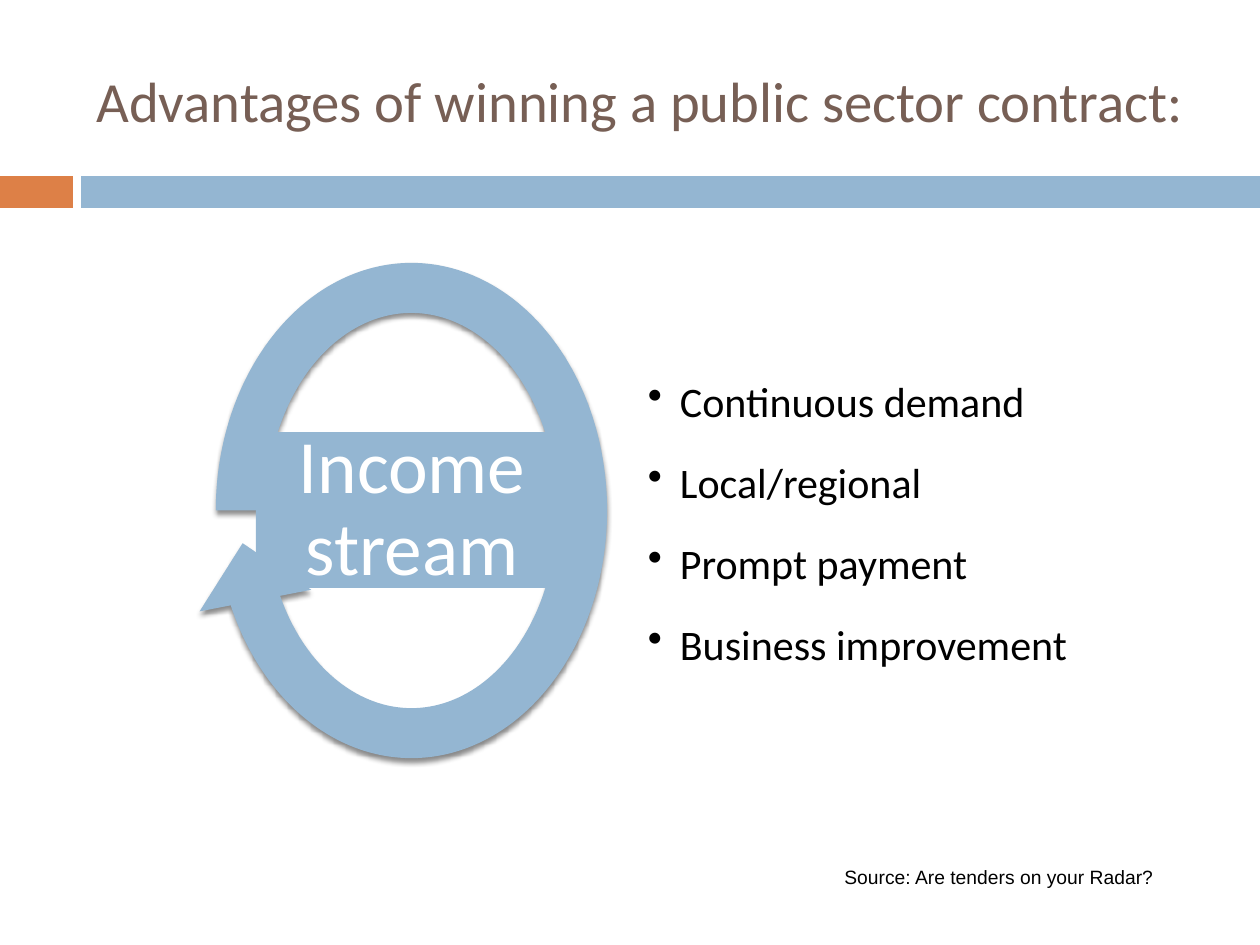
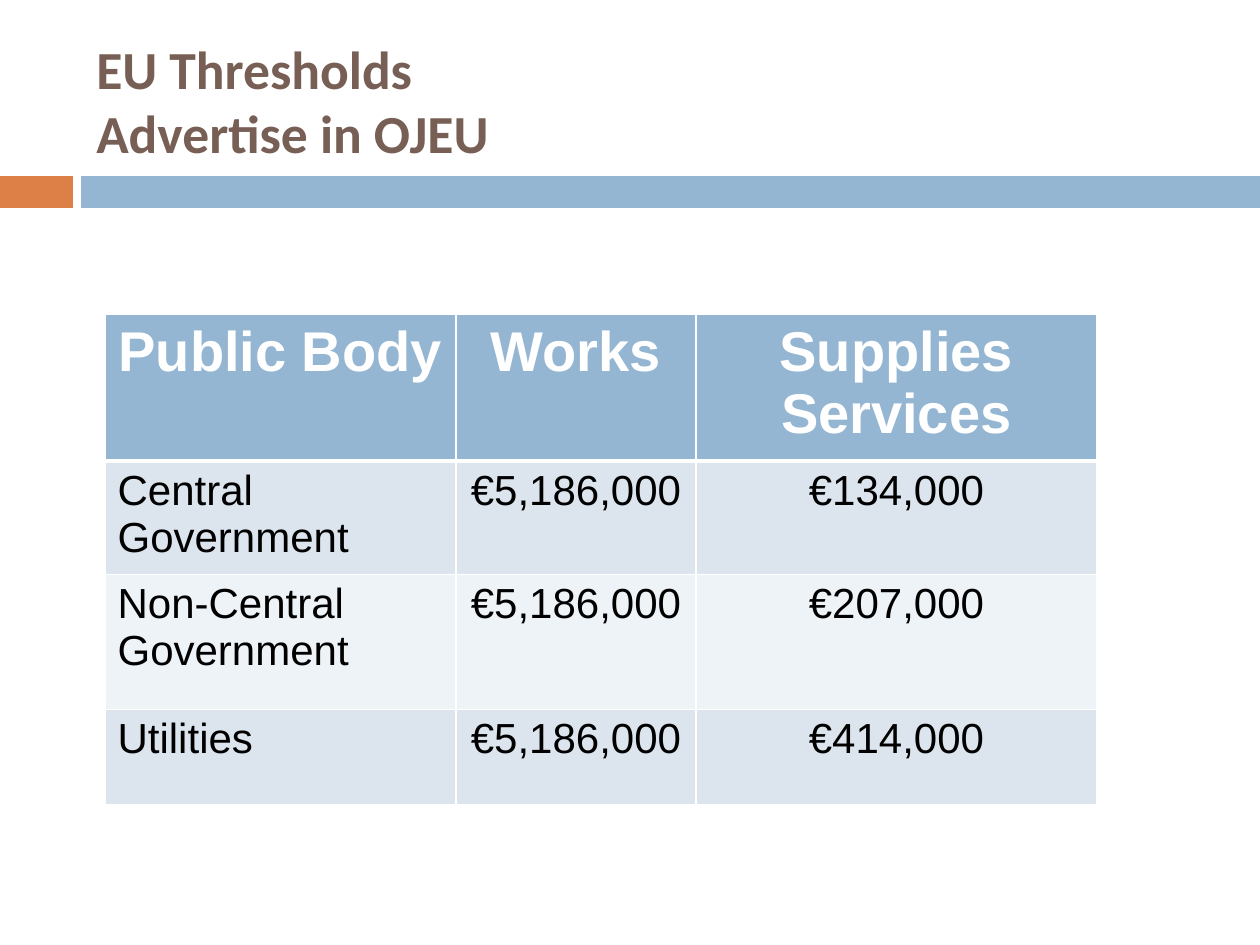
from pptx import Presentation
from pptx.dml.color import RGBColor
from pptx.enum.shapes import MSO_SHAPE
from pptx.enum.text import MSO_ANCHOR, PP_ALIGN
from pptx.oxml import parse_xml
from pptx.oxml.ns import nsdecls, qn
from pptx.util import Pt

RECT, LOOP = MSO_SHAPE.RECTANGLE, MSO_SHAPE.CIRCULAR_ARROW
LEFT, MID, RIGHT = PP_ALIGN.LEFT, PP_ALIGN.CENTER, PP_ALIGN.RIGHT
TOP, CENTRE = MSO_ANCHOR.TOP, MSO_ANCHOR.MIDDLE

SCALE = 914400 / 126
HEX = {"blue": "94B6D2", "orange": "DD8047", "brown": "775F55",
       "black": "000000", "white": "FFFFFF", "odd": "DCE5EE", "even": "EEF3F7"}
BODY, PLAIN = "Calibri", "Arial"


def emu(px):
    return round(px * SCALE)


def rgb(name):
    return RGBColor.from_string(HEX[name])


class Deck:
    def __init__(self):
        self.prs = Presentation()
        self.prs.slide_width, self.prs.slide_height = emu(1260), emu(945)
        self.slide = None

    def page(self, title, size, bold=False):
        """Start a slide with the shared band and title."""
        self.slide = self.prs.slides.add_slide(self.prs.slide_layouts[6])
        self.shape(RECT, (0, 176, 73, 32), "orange")
        self.shape(RECT, (81, 176, 1179, 32), "blue")
        self.text(title, (84, 32, 1124, 136), size, "brown", bold=bold,
                  anchor=CENTRE)

    def shape(self, kind, box, fill):
        item = self.slide.shapes.add_shape(kind, *map(emu, box))
        item.shadow.inherit = False
        item.fill.solid()
        item.fill.fore_color.rgb = rgb(fill)
        item.line.fill.background()
        return item

    def loop(self, box, fill):
        """Circular arrow with a soft shadow below."""
        item = self.shape(LOOP, box, fill)
        for i, value in enumerate((0.11, 11.42, 90, 108, 0.125)):
            item.adjustments[i] = value
        item._element.spPr.find(qn("a:effectLst")).append(parse_xml(
            f'<a:outerShdw {nsdecls("a")} blurRad="{Pt(3)}" dist="{Pt(2.4)}" '
            f'dir="5400000" rotWithShape="0"><a:srgbClr val="{HEX["black"]}">'
            '<a:alpha val="45000"/></a:srgbClr></a:outerShdw>'))

    def style(self, para, size, color, font=BODY, bold=False, align=LEFT):
        para.alignment = align
        for run in para.runs:
            run.font.size, run.font.name, run.font.bold = Pt(size), font, bold
            run.font.color.rgb = rgb(color)

    def text(self, text, box, size, color, font=BODY, bold=False, align=LEFT,
             anchor=TOP, inset=None, spacing=None, after=None, bullet=False):
        frame = self.slide.shapes.add_textbox(*map(emu, box)).text_frame
        frame.word_wrap, frame.vertical_anchor = True, anchor
        if inset is not None:
            frame.margin_left = frame.margin_right = emu(inset)
            frame.margin_top = frame.margin_bottom = emu(inset)
        frame.text = text
        for para in frame.paragraphs:
            if bullet:
                self.bullet(para)
            para.line_spacing = spacing
            para.space_after = after
            self.style(para, size, color, font, bold, align)

    def bullet(self, para):
        props = para._p.get_or_add_pPr()
        props.set("marL", str(emu(32)))
        props.set("indent", str(-emu(32)))
        props.append(parse_xml(f'<a:buChar {nsdecls("a")} char="•"/>'))

    def edge(self, cell, side, width):
        cell._tc.get_or_add_tcPr().append(parse_xml(
            f'<a:ln{side} {nsdecls("a")} w="{Pt(width)}"><a:solidFill>'
            f'<a:srgbClr val="{HEX["white"]}"/></a:solidFill></a:ln{side}>'))

    def table(self, box, cols, rows, data):
        grid = self.slide.shapes.add_table(
            len(rows), len(cols), *map(emu, box)).table
        for col, width in zip(grid.columns, cols):
            col.width = emu(width)
        for r, (height, line) in enumerate(zip(rows, data)):
            grid.rows[r].height = emu(height)
            head = r == 0
            fill = "blue" if head else "odd" if r % 2 else "even"
            for c, value in enumerate(line):
                cell = grid.cell(r, c)
                for side in "LRTB":
                    thick = (head and side == "B") or (r == 1 and side == "T")
                    self.edge(cell, side, 3 if thick else 1)
                cell.fill.solid()
                cell.fill.fore_color.rgb = rgb(fill)
                cell.text = value
                self.style(cell.text_frame.paragraphs[0], 32 if head else 24,
                           "white" if head else "black", PLAIN, head,
                           MID if head or c else LEFT)


def main():
    deck = Deck()

    # Advantages: income loop and its benefits
    deck.page("Advantages of winning a public sector contract:", 32.4)
    deck.loop((184, 231, 455, 559), "blue")
    deck.text("Continuous demand\nLocal/regional\nPrompt payment\n"
              "Business improvement", (645, 258, 431, 503), 24, "black",
              anchor=CENTRE, inset=3, spacing=1.5, after=Pt(3), bullet=True)
    label = (256, 432, 312, 156)
    deck.shape(RECT, label, "blue")
    deck.text("Income stream", label, 43, "white", align=MID, anchor=CENTRE,
              inset=4, spacing=0.9)
    deck.text("Source: Are tenders on your Radar?", (501, 859, 665, 37), 11,
              "black", font=PLAIN, align=RIGHT)

    # Thresholds: table by public body
    deck.page("EU Thresholds\vAdvertise in OJEU", 30.6, bold=True)
    works = "€5,186,000"
    deck.table((105, 314, 992, 490), (351, 240, 401), (122, 95, 135, 95), (
        ("Public Body", "Works", "Supplies Services"),
        ("Central Government", works, "€134,000"),
        ("Non-Central Government", works, "€207,000"),
        ("Utilities", works, "€414,000")))

    deck.prs.save("out.pptx")


if __name__ == "__main__":
    main()
